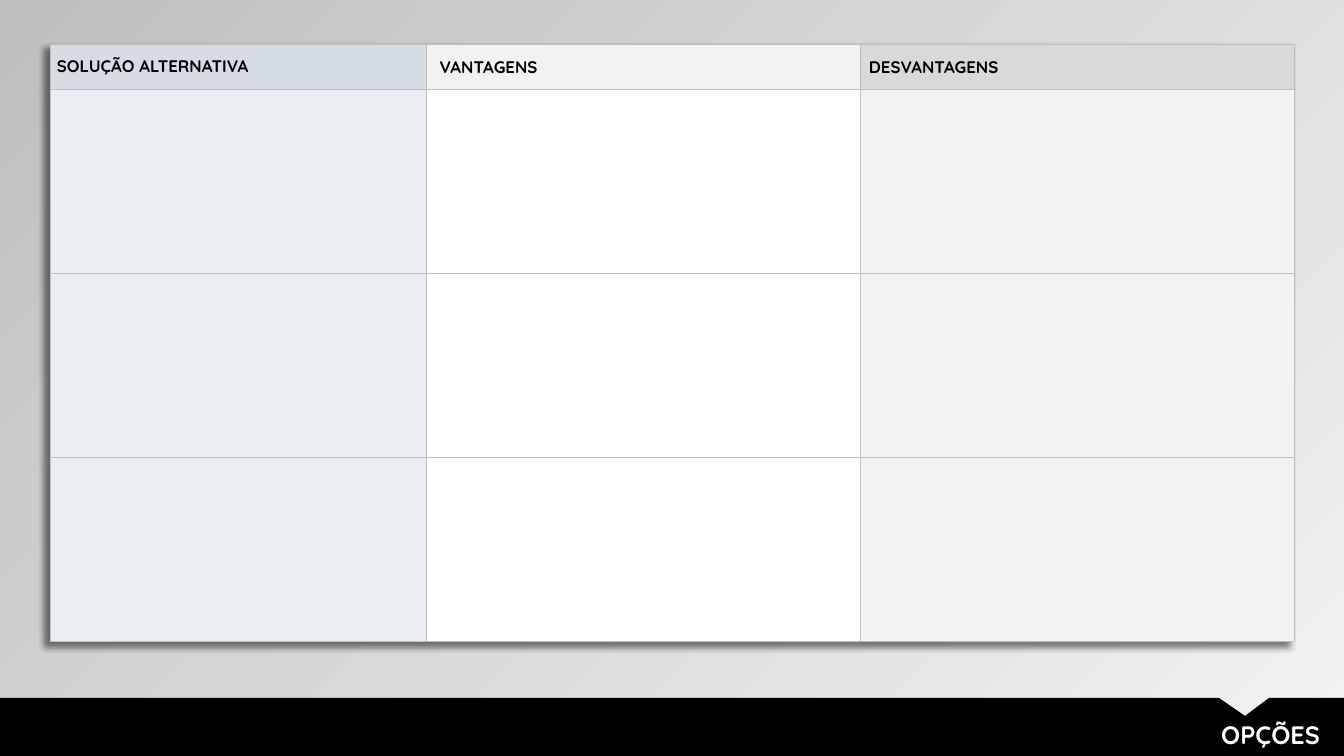
from lxml.etree import SubElement
from pptx import Presentation
from pptx.dml.color import RGBColor
from pptx.enum.text import MSO_ANCHOR as Anchor, PP_ALIGN as Align
from pptx.oxml import parse_xml
from pptx.oxml.ns import nsdecls, qn
from pptx.util import Pt

PX = 914400 / 100.8
BLACK = RGBColor(0x00, 0x00, 0x00)
WHITE = RGBColor(0xFF, 0xFF, 0xFF)
PALE_GREY = RGBColor(0xF2, 0xF2, 0xF2)
LIGHT_GREY = RGBColor(0xD9, 0xD9, 0xD9)
GREY = RGBColor(0xBF, 0xBF, 0xBF)
BLUE_GREY = RGBColor(0xD6, 0xDC, 0xE4)
PALE_BLUE = RGBColor(0xEA, 0xEE, 0xF3)


def px(*lengths):
    return [round(length * PX) for length in lengths]


def write(para, text, size, color):
    span = para.add_run()
    span.text = text
    for name, value in dict(name="Quicksand", size=Pt(size), bold=True).items():
        setattr(span.font, name, value)
    span.font.color.rgb = color


deck = Presentation()
deck.slide_width, deck.slide_height = px(1344, 756)
page = deck.slides.add_slide(deck.slide_layouts[5])

# Background gradient, light at the bottom right
backdrop = page.background.fill
backdrop.gradient()
backdrop.gradient_angle = 135
for stop, color in zip(backdrop.gradient_stops, (PALE_GREY, GREY)):
    stop.color.rgb = color

# Options table: heading, margins (left, top, right), heading fill, body fill, width
COLUMNS = [
    ("SOLUÇÃO ALTERNATIVA", (7, 0, 7), BLUE_GREY, PALE_BLUE, 376),
    (" VANTAGENS", (9, 1, 1), PALE_GREY, WHITE, 434),
    ("DESVANTAGENS", (9, 1, 1), LIGHT_GREY, PALE_GREY, 434),
]
ROW_HEIGHTS = [45, 184, 184, 184]
frame = page.shapes.add_table(len(ROW_HEIGHTS), len(COLUMNS),
                              *px(50, 44, 1244, sum(ROW_HEIGHTS)))
table = frame.table
table.first_row = table.horz_banding = False
for row, height in zip(table.rows, ROW_HEIGHTS):
    row.height = px(height)[0]

for c, (heading, margins, head_fill, body_fill, width) in enumerate(COLUMNS):
    table.columns[c].width = px(width)[0]
    for r in range(len(ROW_HEIGHTS)):
        cell = table.cell(r, c)
        cell.fill.solid()
        cell.fill.fore_color.rgb = body_fill if r else head_fill
        borders = cell._tc.get_or_add_tcPr()
        for i, side in enumerate(("lnL", "lnR", "lnT", "lnB")):
            borders.insert(i, parse_xml(
                f'<a:{side} {nsdecls("a")} w="6350"><a:solidFill>'
                f'<a:srgbClr val="{GREY}"/></a:solidFill></a:{side}>'))
    head = table.cell(0, c)
    left, top, right = px(*margins)
    for name, value in dict(margin_left=left, margin_top=top, margin_right=right,
                            margin_bottom=0, vertical_anchor=Anchor.MIDDLE).items():
        setattr(head, name, value)
    write(head.text_frame.paragraphs[0], heading, 12, BLACK)

# Table shadow, falling to the lower left
table._tbl.tblPr.insert(0, parse_xml(
    f'<a:effectLst {nsdecls("a")}><a:outerShdw blurRad="50800" dist="63500" '
    'dir="8100000" algn="tr" rotWithShape="0"><a:srgbClr val="000000">'
    '<a:alpha val="50000"/></a:srgbClr></a:outerShdw></a:effectLst>'))

# Footer band with a notch above the title
outline = page.shapes.build_freeform(0, 698, scale=PX)
outline.add_line_segments([(1219, 698), (1245, 716), (1269, 698), (1344, 698),
                           (1344, 756), (0, 756)], close=True)
band = outline.convert_to_shape()
band.shadow.inherit = False
band.fill.solid()
band.fill.fore_color.rgb = BLACK
band.line.fill.background()

# Title, in front of the band
title = page.shapes.title
title.left, title.top, title.width, title.height = px(417, 714, 913, 40)
page.shapes._spTree.append(title._element)
text = title.text_frame
text.word_wrap = True
text.vertical_anchor = Anchor.TOP
SubElement(text._txBody.bodyPr, qn("a:noAutofit"))
text.paragraphs[0].alignment = Align.RIGHT
write(text.paragraphs[0], "OPÇÕES", 18, WHITE)

deck.save("out.pptx")
